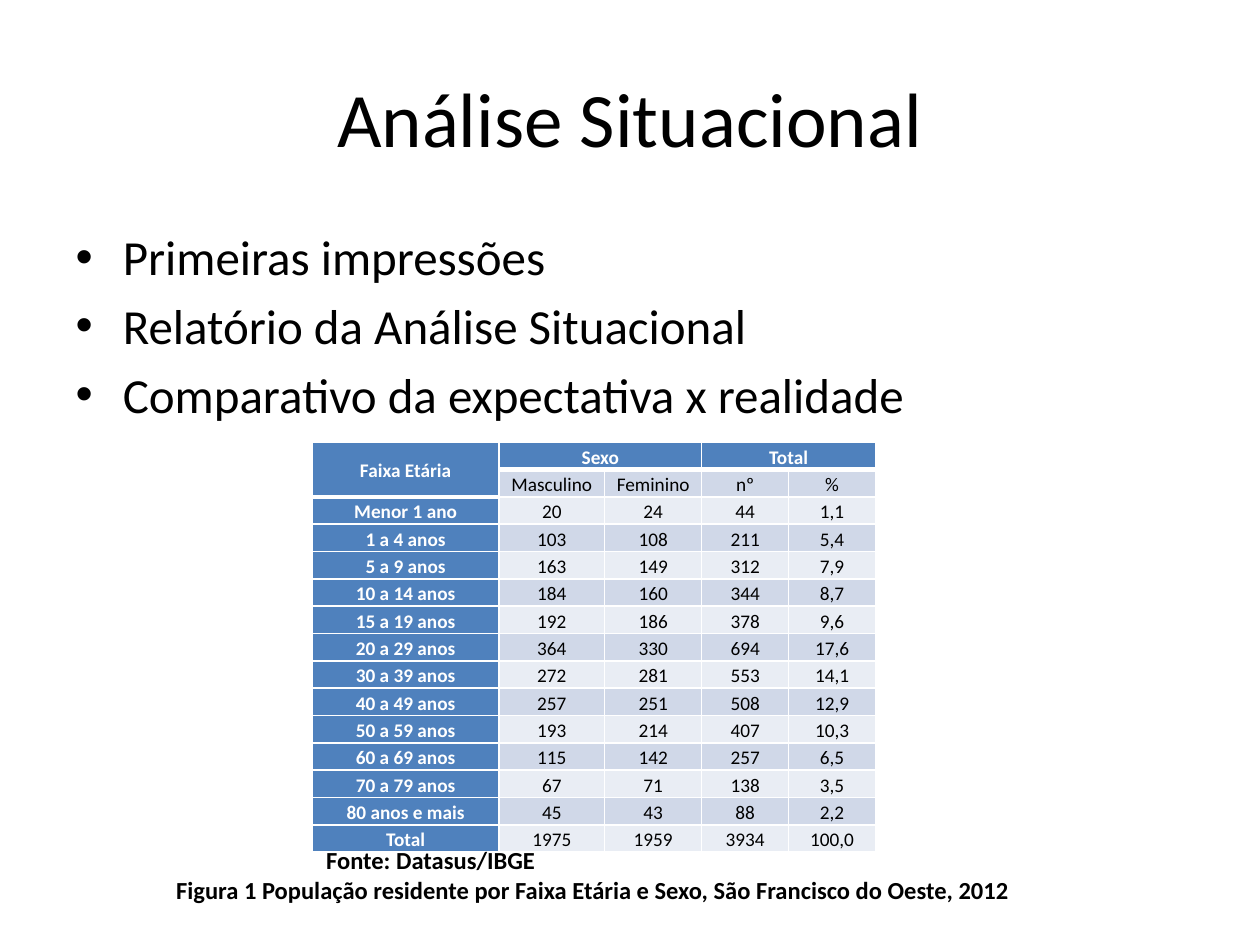
import lxml.etree
import pptx
import pptx.dml.color
import pptx.enum.text
import pptx.oxml.ns
import pptx.util

Inches = pptx.util.Inches
Pt = pptx.util.Pt
RGB = pptx.dml.color.RGBColor.from_string
ALIGN = pptx.enum.text.PP_ALIGN
ANCHOR = pptx.enum.text.MSO_ANCHOR
qn = pptx.oxml.ns.qn

THEME = {
    "font": "Calibri",
    "ink": "000000", "white": "FFFFFF", "head": "4F81BD",
    "bands": ("E9EDF4", "D0D8E8"),
    "title": 44, "list": 28, "note": 14, "cell": 11,
}


def style(par, size, color="ink", bold=False):
    for run in par.runs:
        run.font.name = THEME["font"]
        run.font.size = Pt(THEME[size])
        run.font.bold = bold
        run.font.color.rgb = RGB(THEME[color])


def edge(cell, side, width):
    """Draw one white border; side is L, R, T or B."""
    props = cell._tc.get_or_add_tcPr()
    line = lxml.etree.SubElement(props, qn("a:ln" + side), w=str(Pt(width)))
    fill = lxml.etree.SubElement(line, qn("a:solidFill"))
    lxml.etree.SubElement(fill, qn("a:srgbClr"), val=THEME["white"])


deck = pptx.Presentation()
deck.slide_width, deck.slide_height = Inches(10), Inches(7.5)
slide = deck.slides.add_slide(deck.slide_layouts[1])

# Title and list
title, body = slide.placeholders
title.left, title.top = Inches(0.5), Inches(0.3)
title.width, title.height = Inches(9), Inches(1.25)
title.text_frame.text = "Análise Situacional"
style(title.text_frame.paragraphs[0], "title")

body.left, body.top = Inches(0.5), Inches(1.75)
body.width, body.height = Inches(9), Inches(4.95)
body.text_frame.text = "\n".join([
    "Primeiras impressões",
    "Relatório da Análise Situacional",
    "Comparativo da expectativa x realidade",
])
for par in body.text_frame.paragraphs:
    style(par, "list")

# Population table
rows = [
    ("Faixa Etária", "Sexo", "", "Total", ""),
    ("", "Masculino", "Feminino", "nº", "%"),
    ("Menor 1 ano", "20", "24", "44", "1,1"),
    ("1 a 4 anos", "103", "108", "211", "5,4"),
    ("5 a 9 anos", "163", "149", "312", "7,9"),
    ("10 a 14 anos", "184", "160", "344", "8,7"),
    ("15 a 19 anos", "192", "186", "378", "9,6"),
    ("20 a 29 anos", "364", "330", "694", "17,6"),
    ("30 a 39 anos", "272", "281", "553", "14,1"),
    ("40 a 49 anos", "257", "251", "508", "12,9"),
    ("50 a 59 anos", "193", "214", "407", "10,3"),
    ("60 a 69 anos", "115", "142", "257", "6,5"),
    ("70 a 79 anos", "67", "71", "138", "3,5"),
    ("80 anos e mais", "45", "43", "88", "2,2"),
    ("Total", "1975", "1959", "3934", "100,0"),
]
widths = (1.48, 0.84, 0.77, 0.69, 0.69)
table = slide.shapes.add_table(
    len(rows), len(widths), Inches(2.48), Inches(3.51),
    Inches(sum(widths)), Inches(0.21 * len(rows))).table
for col, width in zip(table.columns, widths):
    col.width = Inches(width)

for r, row in enumerate(rows):
    table.rows[r].height = Inches(0.21)
    for c, text in enumerate(row):
        cell = table.cell(r, c)
        head = r == 0 or c == 0
        thick = r == 0 or (r == 1 and c == 0)
        for side in "LRT":
            edge(cell, side, 1)
        edge(cell, "B", 3 if thick else 1)
        cell.fill.solid()
        cell.fill.fore_color.rgb = RGB(
            THEME["head"] if head else THEME["bands"][r % 2])
        cell.vertical_anchor = ANCHOR.MIDDLE
        cell.margin_left = cell.margin_right = Inches(0.05)
        cell.margin_top = cell.margin_bottom = 0
        cell.text_frame.text = text
        par = cell.text_frame.paragraphs[0]
        par.alignment = ALIGN.CENTER
        par.line_spacing = 1.15
        par.font.size = Pt(THEME["cell"])
        style(par, "cell", "white" if head else "ink", head)

for first, last in (((0, 0), (1, 0)), ((0, 1), (0, 2)), ((0, 3), (0, 4))):
    table.cell(*first).merge(table.cell(*last))

# Source and caption
note = slide.shapes.add_textbox(
    Inches(1.3), Inches(6.66), Inches(7.17), Inches(0.81)).text_frame
note.word_wrap = True
note.text = "\n".join([
    "Fonte: Datasus/IBGE",
    "Figura 1 População residente por Faixa Etária e Sexo, "
    "São Francisco do Oeste, 2012",
])
for par in note.paragraphs:
    style(par, "note", bold=True)
note.paragraphs[0]._p.get_or_add_pPr().set("marL", str(Inches(1.19)))

deck.save("out.pptx")
